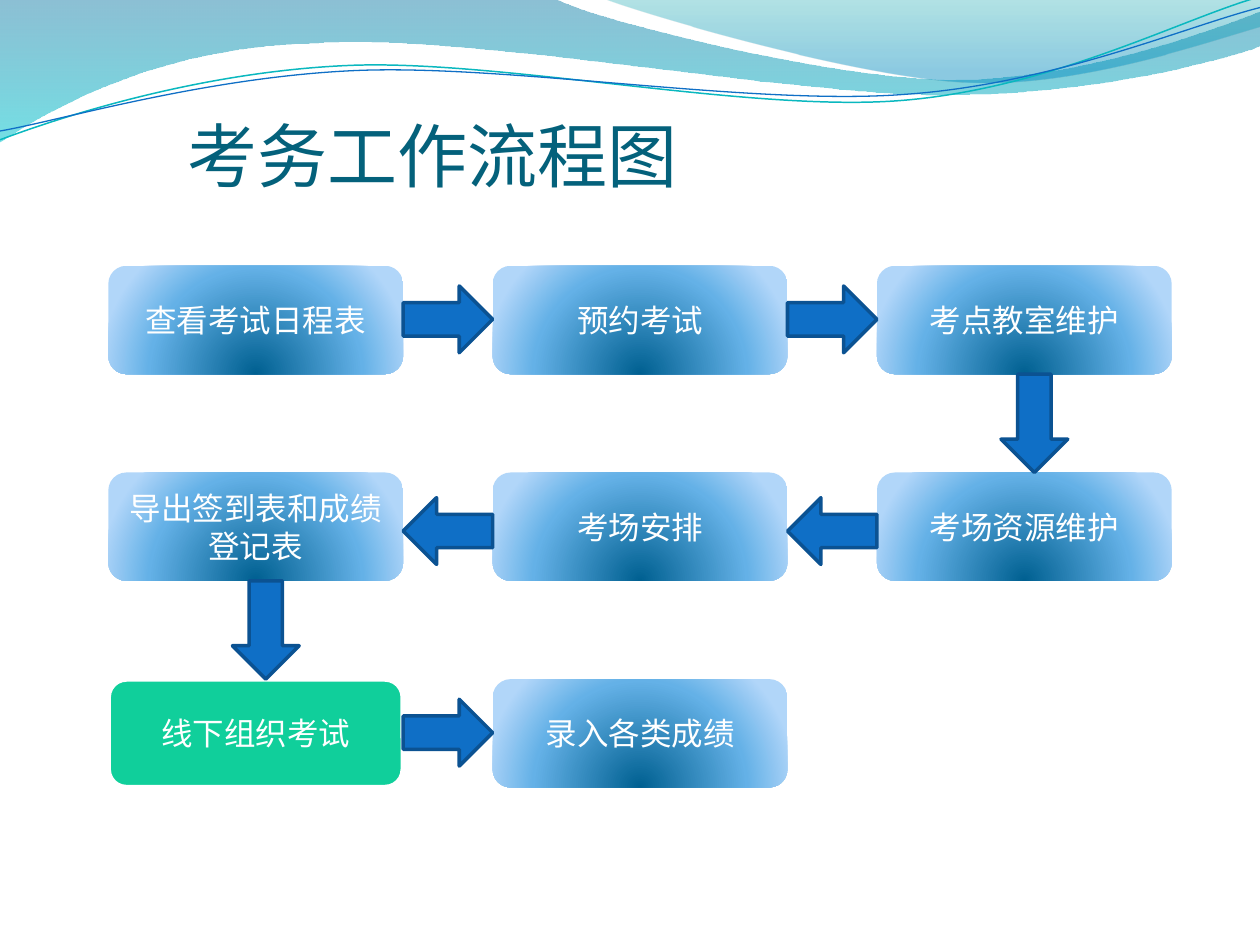
from pptx import Presentation
from pptx.dml.color import RGBColor
from pptx.enum.shapes import MSO_SHAPE as Shape
from pptx.enum.text import MSO_ANCHOR as Anchor, MSO_AUTO_SIZE as AutoSize, PP_ALIGN as Align
from pptx.oxml import parse_xml
from pptx.oxml.ns import nsdecls
from pptx.util import Inches, Pt

WHITE = RGBColor(0xFF, 0xFF, 0xFF)
TITLE_TEAL = RGBColor(0x04, 0x61, 0x7B)
ARROW_BLUE = RGBColor(0x0F, 0x6F, 0xC6)
ARROW_EDGE = RGBColor(0x0B, 0x52, 0x92)
OFFLINE_GREEN = RGBColor(0x10, 0xCF, 0x9B)
LINE_TEAL = RGBColor(0x0A, 0xB8, 0xBF)
DEEP_BLUE = RGBColor(0x00, 0x60, 0x91)
SKY_BLUE = RGBColor(0x64, 0xB1, 0xE7)
PALE_BLUE = RGBColor(0xB1, 0xD6, 0xF9)
WAVE_BLUE = RGBColor(0x00, 0x74, 0xA1)
WAVE_CYAN = RGBColor(0x00, 0xC6, 0xCF)
CREST_TEAL = RGBColor(0x00, 0xA1, 0xA9)
CREST_BLUE = RGBColor(0x00, 0x8B, 0xBF)

TITLE_FONT = "Noto Sans CJK SC"
BOX_FONT = "Vollkorn"

DOWNWARD = '<a:lin ang="5400000" scaled="0"/>'
FROM_BELOW = ('<a:path path="circle"><a:fillToRect l="50000" t="130000" '
              'r="50000" b="-30000"/></a:path>')
BOX_STOPS = [(0, DEEP_BLUE, 100), (68, SKY_BLUE, 100), (100, PALE_BLUE, 100)]

WAVES = [
    ([(0, 0), (4.4, -0.01), (4.76, 0.17, 6.64, 0.63, 7.58, 0.63),
      (8.53, 0.63, 9.58, 0.26, 10, 0.09), (10.01, 0.36),
      (9.83, 0.44, 8.7, 0.76, 7.46, 0.75), (6.22, 0.75, 3.82, 0.28, 2.57, 0.34),
      (1.29, 0.36, 0.46, 0.83, -0.01, 1.13), (0, 0)],
     [(0, WAVE_BLUE, 45), (100, WAVE_CYAN, 55)]),
    ([(4.79, -0.01), (5.09, 0.11, 6.82, 0.62, 7.69, 0.65),
      (8.56, 0.69, 9.61, 0.32, 10, 0.21), (10, 0), (4.79, -0.01)],
     [(0, CREST_TEAL, 30), (80, CREST_BLUE, 45)]),
]
WAVE_LINES = [
    ([(0, 1.11), (0.48, 0.93, 1.58, 0.57, 2.77, 0.52),
      (3.95, 0.47, 5.93, 0.89, 7.13, 0.8), (8.33, 0.71, 9.38, 0.15, 9.98, -0.02)],
     LINE_TEAL, 0.85),
    ([(0, 1.04), (0.47, 0.96, 1.64, 0.61, 2.83, 0.56),
      (4.03, 0.51, 5.97, 0.84, 7.17, 0.75), (8.36, 0.67, 9.41, 0.21, 10, 0.06)],
     ARROW_BLUE, 0.75),
]

STEPS = [
    ("查看考试日程表", 0, 0), ("预约考试", 1, 0), ("考点教室维护", 2, 0),
    ("考场资源维护", 2, 1), ("考场安排", 1, 1), ("导出签到表和成绩登记表", 0, 1),
    ("线下组织考试", 0, 2), ("录入各类成绩", 1, 2),
]
OFFLINE_STEP = "线下组织考试"
GRID_LEFT, GRID_TOP = 0.86, 2.11
COLUMN_STEP, ROW_STEP = 3.05, 1.64
BOX_WIDTH, BOX_HEIGHT = 2.34, 0.86
ARROW_BREADTH = 0.53


def add_outline(page, segments, close):
    points = [(Inches(x), Inches(y)) for segment in segments
              for x, y in zip(segment[::2], segment[1::2])]
    builder = page.shapes.build_freeform(*points[0])
    builder.add_line_segments(points[1:], close=close)
    outline = builder.convert_to_shape()
    outline.shadow.inherit = False
    bend_segments(outline, segments)
    return outline


def bend_segments(outline, segments):
    corners = iter(outline._element.xpath(".//a:lnTo"))
    for segment in segments[1:]:
        first = next(corners)
        if len(segment) == 2:
            continue
        curve = parse_xml(f'<a:cubicBezTo {nsdecls("a")}/>')
        first.addprevious(curve)
        for node in (first, next(corners), next(corners)):
            curve.append(node[0])
            node.getparent().remove(node)


def set_gradient(shape, stops, direction):
    marks = "".join(
        f'<a:gs pos="{place * 1000}"><a:srgbClr val="{color}">'
        f'<a:alpha val="{alpha * 1000}"/></a:srgbClr></a:gs>'
        for place, color, alpha in stops)
    shape._element.spPr.insert(2, parse_xml(
        f'<a:gradFill {nsdecls("a")} rotWithShape="1">'
        f'<a:gsLst>{marks}</a:gsLst>{direction}</a:gradFill>'))


def add_wave(page, segments, stops):
    wave = add_outline(page, segments, True)
    wave.line.fill.background()
    set_gradient(wave, stops, DOWNWARD)


def add_wave_line(page, segments, color, width):
    curve = add_outline(page, segments, False)
    curve.fill.background()
    curve.line.color.rgb = color
    curve.line.width = Pt(width)


def set_title(page):
    title = page.shapes.title
    title.left, title.top = Inches(0.5), Inches(0.77)
    title.width, title.height = Inches(9), Inches(0.79)
    frame = title.text_frame
    frame.text = "考务工作流程图"
    frame.auto_size = AutoSize.NONE
    frame.vertical_anchor = Anchor.BOTTOM
    frame.margin_left, frame.margin_right = Inches(0.99), 0
    frame.margin_top, frame.margin_bottom = Inches(0.05), 0
    para = frame.paragraphs[0]
    para.alignment = Align.LEFT
    para.font.name = TITLE_FONT
    para.font.size = Pt(40)
    para.font.color.rgb = TITLE_TEAL


def corner(column, row):
    return GRID_LEFT + column * COLUMN_STEP, GRID_TOP + row * ROW_STEP


def add_box(page, text, column, row):
    left, top = corner(column, row)
    box = page.shapes.add_shape(Shape.ROUNDED_RECTANGLE, Inches(left), Inches(top),
                                Inches(BOX_WIDTH), Inches(BOX_HEIGHT))
    box.shadow.inherit = False
    if text == OFFLINE_STEP:
        box.fill.solid()
        box.fill.fore_color.rgb = OFFLINE_GREEN
        box.line.color.rgb = WHITE
        box.line.width = Pt(3)
    else:
        set_gradient(box, BOX_STOPS, FROM_BELOW)
        box.line.fill.background()
    frame = box.text_frame
    frame.text = text
    frame.word_wrap = True
    frame.vertical_anchor = Anchor.MIDDLE
    para = frame.paragraphs[0]
    para.alignment = Align.CENTER
    para.font.name = BOX_FONT
    para.font.size = Pt(18)
    para.font.color.rgb = WHITE


def add_arrow(page, start, end):
    left, top = corner(min(start[0], end[0]), start[1])
    if start[0] == end[0]:
        kind = Shape.DOWN_ARROW
        left += (BOX_WIDTH - ARROW_BREADTH) / 2 + 0.08
        top += BOX_HEIGHT
        width, height = ARROW_BREADTH, ROW_STEP - BOX_HEIGHT
    else:
        forward = end[0] > start[0]
        kind = Shape.RIGHT_ARROW if forward else Shape.LEFT_ARROW
        left += BOX_WIDTH
        top += 0.16 if forward else 0.2
        width, height = COLUMN_STEP - BOX_WIDTH, ARROW_BREADTH
    arrow = page.shapes.add_shape(kind, Inches(left), Inches(top),
                                  Inches(width), Inches(height))
    arrow.shadow.inherit = False
    arrow.fill.solid()
    arrow.fill.fore_color.rgb = ARROW_BLUE
    arrow.line.color.rgb = ARROW_EDGE
    arrow.line.width = Pt(2)


def main():
    deck = Presentation()
    deck.slide_width, deck.slide_height = Inches(10), Inches(7.5)
    page = deck.slides.add_slide(deck.slide_layouts[5])
    for segments, stops in WAVES:
        add_wave(page, segments, stops)
    for segments, color, width in WAVE_LINES:
        add_wave_line(page, segments, color, width)
    set_title(page)
    for text, column, row in STEPS:
        add_box(page, text, column, row)
    for start, end in zip(STEPS, STEPS[1:]):
        add_arrow(page, start[1:], end[1:])
    deck.save("out.pptx")


if __name__ == "__main__":
    main()
